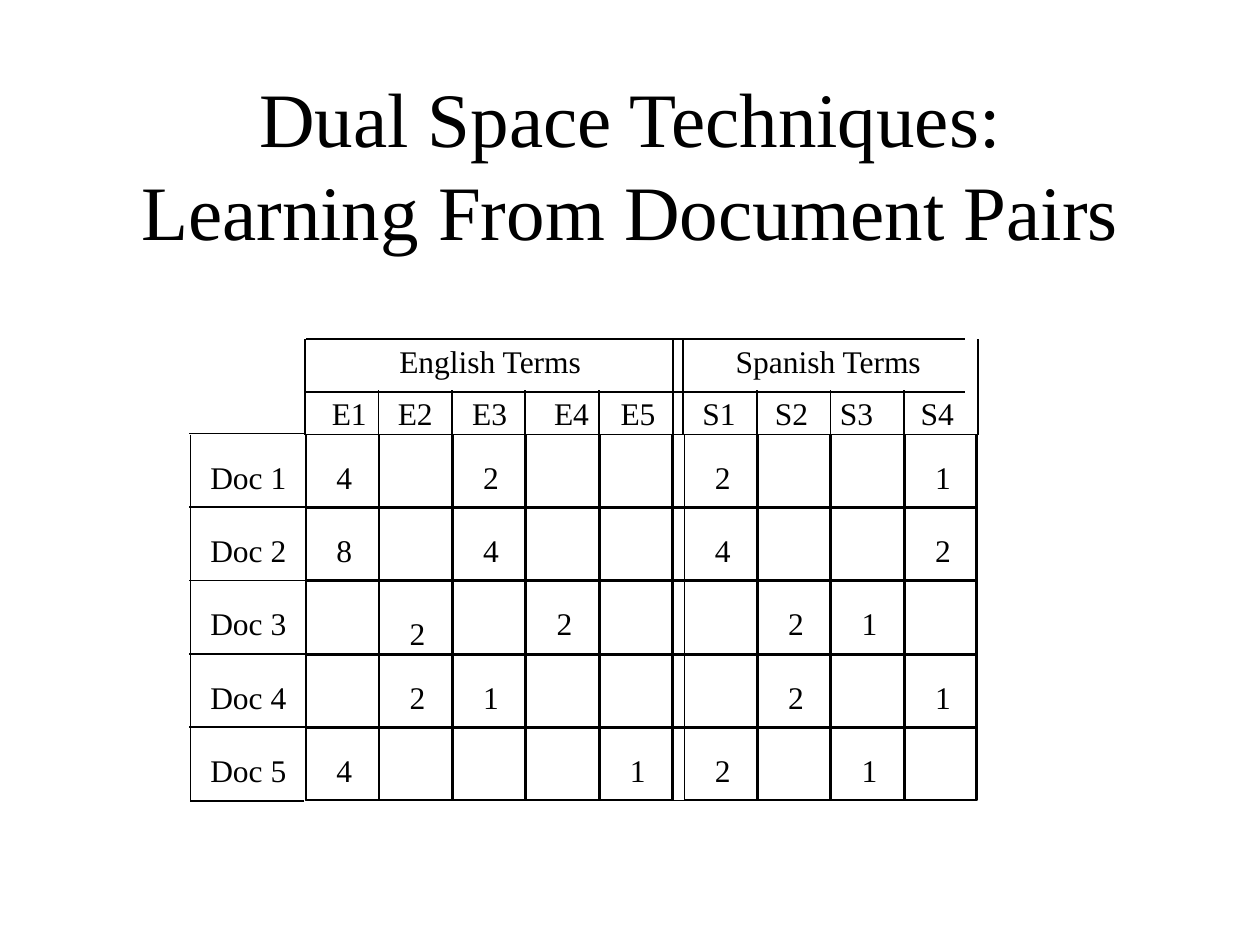
import dataclasses

import lxml.etree
import pptx
import pptx.dml.color
import pptx.enum.shapes
import pptx.enum.text
import pptx.oxml.ns
import pptx.util

Cm = pptx.util.Cm
BLACK = "000000"
FONT = "Times New Roman"
PITCH = 1.48
CELL = 1.46
GRID_LEFT, GRID_TOP = 6.17, 8.76
GRID_WIDTH, GRID_HEIGHT = 13.51, 7.37
GRID_BOTTOM = GRID_TOP + GRID_HEIGHT
LANGUAGE_GAP = 0.23
HEADER_TOP, HEADER_MIDDLE, HEADER_RIGHT = 6.83, 7.9, 19.46
DOCUMENT_LEFT = 3.84
TEXT_HEIGHT = 1.02


@dataclasses.dataclass(frozen=True)
class Term:
    name: str
    left: float
    tab: float


@dataclasses.dataclass(frozen=True)
class Count:
    term: str
    document: int
    value: int
    drop: float = 0


@dataclasses.dataclass(frozen=True)
class Rule:
    start_x: float
    start_y: float
    end_x: float
    end_y: float


NAMES = ("E1", "E2", "E3", "E4", "E5", "S1", "S2", "S3", "S4")
TABS = (0.32, 1.65, 3.15, 4.8, 6.14, 7.79, 9.25, 10.56, 12.19)
TERMS = [
    Term(name, GRID_LEFT + PITCH * index + LANGUAGE_GAP * name.startswith("S"), tab)
    for index, (name, tab) in enumerate(zip(NAMES, TABS))
]
ROW_TOPS = [GRID_TOP + PITCH * index for index in range(5)]
COUNTS = [
    Count("E1", 0, 4), Count("E3", 0, 2), Count("S1", 0, 2), Count("S4", 0, 1),
    Count("E1", 1, 8), Count("E3", 1, 4), Count("S1", 1, 4), Count("S4", 1, 2),
    Count("E2", 2, 2, drop=0.2), Count("E4", 2, 2), Count("S2", 2, 2), Count("S3", 2, 1),
    Count("E2", 3, 2), Count("E3", 3, 1), Count("S2", 3, 2), Count("S4", 3, 1),
    Count("E1", 4, 4), Count("E5", 4, 1), Count("S1", 4, 2), Count("S3", 4, 1),
]
RULES = [
    *(Rule(x, GRID_TOP, x, HEADER_TOP) for x in (6.15, 13.77, 19.71)),
    *(Rule(GRID_LEFT, y, HEADER_RIGHT, y) for y in (HEADER_TOP, HEADER_MIDDLE)),
    *(
        Rule(term.left - 0.02, GRID_TOP, term.left - 0.02, HEADER_MIDDLE - 0.03)
        for term in TERMS
        if term.name not in ("E1", "S1")
    ),
    *(Rule(GRID_LEFT, top - 0.02, DOCUMENT_LEFT - 0.03, top - 0.02) for top in ROW_TOPS),
    Rule(DOCUMENT_LEFT, GRID_TOP, DOCUMENT_LEFT, GRID_BOTTOM),
    Rule(DOCUMENT_LEFT, GRID_BOTTOM + 0.02, 6.12, GRID_BOTTOM + 0.02),
    Rule(13.56, HEADER_TOP + 0.03, 13.56, GRID_BOTTOM),
]


def color(value: str) -> pptx.dml.color.RGBColor:
    return pptx.dml.color.RGBColor.from_string(value)


def style_line(line) -> None:
    line.color.rgb = color(BLACK)
    line.width = pptx.util.Pt(1)


def add_text(
    slide,
    text: str,
    *,
    left: float,
    top: float,
    width: float,
    height: float = TEXT_HEIGHT,
    size: int = 18,
    wrap: bool = False,
    alignment=pptx.enum.text.PP_ALIGN.LEFT,
    anchor=pptx.enum.text.MSO_ANCHOR.TOP,
    tabs: tuple[float, ...] = (),
) -> None:
    shape = slide.shapes.add_textbox(Cm(left), Cm(top), Cm(width), Cm(height))
    frame = shape.text_frame
    frame.text = text
    frame.word_wrap = wrap
    frame.vertical_anchor = anchor
    if not wrap:
        frame.auto_size = pptx.enum.text.MSO_AUTO_SIZE.SHAPE_TO_FIT_TEXT
    for paragraph in frame.paragraphs:
        paragraph.alignment = alignment
        for run in paragraph.runs:
            run.font.name = FONT
            run.font.size = pptx.util.Pt(size)
            run.font.color.rgb = color(BLACK)
        if tabs:
            properties = paragraph._p.get_or_add_pPr()
            tab_list = lxml.etree.SubElement(properties, pptx.oxml.ns.qn("a:tabLst"))
            for tab in tabs:
                lxml.etree.SubElement(
                    tab_list, pptx.oxml.ns.qn("a:tab"), pos=str(int(Cm(tab))), algn="l"
                )


def add_band(slide, left: float, top: float, width: float, height: float) -> None:
    shape = slide.shapes.add_shape(
        pptx.enum.shapes.MSO_SHAPE.RECTANGLE, Cm(left), Cm(top), Cm(width), Cm(height)
    )
    shape.shadow.inherit = False
    shape.fill.background()
    style_line(shape.line)


def add_rule(slide, rule: Rule) -> None:
    connector = slide.shapes.add_connector(
        pptx.enum.shapes.MSO_CONNECTOR.STRAIGHT,
        Cm(rule.start_x), Cm(rule.start_y), Cm(rule.end_x), Cm(rule.end_y),
    )
    style_line(connector.line)
    lxml.etree.SubElement(connector._element.spPr, pptx.oxml.ns.qn("a:effectLst"))


def main() -> None:
    presentation = pptx.Presentation()
    presentation.slide_width = Cm(25.4)
    presentation.slide_height = Cm(19.05)
    slide = presentation.slides.add_slide(presentation.slide_layouts[6])

    add_text(
        slide,
        "Dual Space Techniques:\nLearning From Document Pairs",
        left=1.91, top=1.7, width=21.59, height=3.18, size=44, wrap=True,
        alignment=pptx.enum.text.PP_ALIGN.CENTER,
        anchor=pptx.enum.text.MSO_ANCHOR.MIDDLE,
    )
    for top in ROW_TOPS:
        add_band(slide, GRID_LEFT, top, GRID_WIDTH, CELL)
    for term in TERMS:
        add_band(slide, term.left, GRID_TOP, CELL, GRID_HEIGHT)

    header = "".join(f"\t{term.name}" for term in TERMS)
    add_text(slide, header, left=6.12, top=7.82, width=13.39, tabs=TABS)
    for number, top in enumerate(ROW_TOPS, start=1):
        add_text(slide, f"Doc {number}", left=3.99, top=top + 0.34, width=2.15)
    term_lefts = {term.name: term.left for term in TERMS}
    for count in COUNTS:
        add_text(
            slide,
            str(count.value),
            left=term_lefts[count.term] + 0.36,
            top=ROW_TOPS[count.document] + 0.34 + count.drop,
            width=0.81,
        )
    add_text(slide, "English Terms", left=7.8, top=6.78, width=4.22)
    add_text(slide, "Spanish Terms", left=14.58, top=6.78, width=4.29)
    for rule in RULES:
        add_rule(slide, rule)

    presentation.save("out.pptx")


if __name__ == "__main__":
    main()
